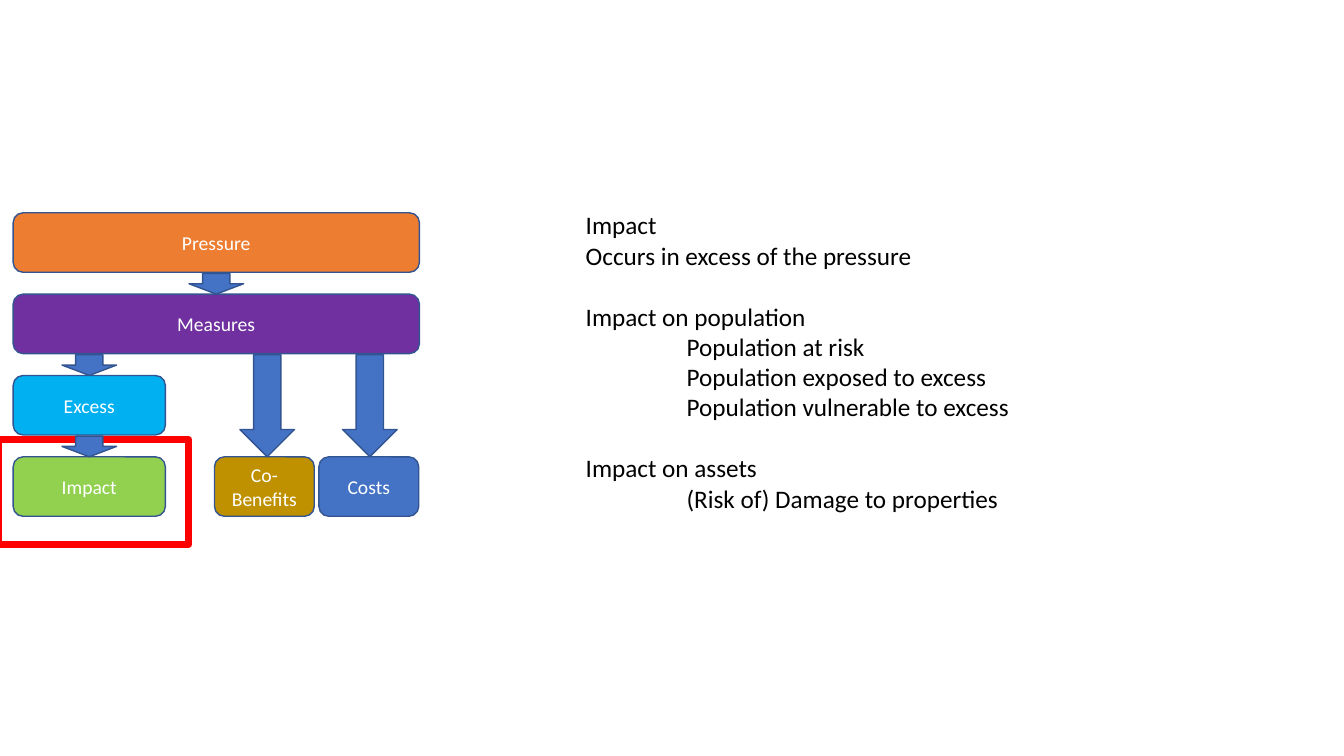
"""Build a slide showing how pressure, measures and excess lead to impact."""
from pptx import Presentation
from pptx.dml.color import RGBColor
from pptx.enum.shapes import MSO_SHAPE
from pptx.enum.text import MSO_ANCHOR, PP_ALIGN
from pptx.util import Pt

RECTANGLE = MSO_SHAPE.RECTANGLE
ROUNDED = MSO_SHAPE.ROUNDED_RECTANGLE
DOWN_ARROW = MSO_SHAPE.DOWN_ARROW
MIDDLE = MSO_ANCHOR.MIDDLE
LEFT, CENTER = PP_ALIGN.LEFT, PP_ALIGN.CENTER

BLACK = RGBColor(0x00, 0x00, 0x00)
WHITE = RGBColor(0xFF, 0xFF, 0xFF)
RED = RGBColor(0xFF, 0x00, 0x00)
ORANGE = RGBColor(0xED, 0x7D, 0x31)
PURPLE = RGBColor(0x70, 0x30, 0xA0)
SKY = RGBColor(0x00, 0xB0, 0xF0)
GREEN = RGBColor(0x92, 0xD0, 0x50)
GOLD = RGBColor(0xBF, 0x90, 0x00)
BLUE = RGBColor(0x44, 0x72, 0xC4)
OUTLINE = RGBColor(0x32, 0x54, 0x91)

FONT = "Calibri"
ROW_TOP, ROW_PITCH, BOX_HEIGHT = 152, 58.1, 42.5
ARROW_WIDTH, ARROW_GAP = 39, 0.8
LINE_HEIGHT, INDENT = 22, 72


def write(para, text, size=14, color=WHITE, align=CENTER, before=0, indent=0):
    para.alignment = align
    para.space_before = Pt(before)
    properties = para._p.get_or_add_pPr()
    properties.set("marL", str(Pt(indent)))
    properties.set("indent", "0")
    span = para.add_run()
    span.text = text
    span.font.name = FONT
    span.font.size = Pt(size)
    span.font.color.rgb = color


def add_box(kind, left, top, width, height, fill=None, line=OUTLINE, weight=1):
    box = page.shapes.add_shape(kind, Pt(left), Pt(top), Pt(width), Pt(height))
    box.shadow.inherit = False
    if fill is None:
        box.fill.background()
    else:
        box.fill.solid()
        box.fill.fore_color.rgb = fill
    box.line.color.rgb = line
    box.line.width = Pt(weight)
    return box


deck = Presentation()
deck.slide_width, deck.slide_height = Pt(960), Pt(540)
page = deck.slides.add_slide(deck.slide_layouts[6])

notes = [
    ("Impact", 0, 0),
    ("Occurs in excess of the pressure", 0, 0),
    ("Impact on population", LINE_HEIGHT, 0),
    ("Population at risk", 0, INDENT),
    ("Population exposed to excess", 0, INDENT),
    ("Population vulnerable to excess", 0, INDENT),
    ("Impact on assets", LINE_HEIGHT, 0),
    ("(Risk of) Damage to properties", 0, INDENT),
]
explanation = page.shapes.add_textbox(Pt(411.3), Pt(146.3), Pt(536.4), Pt(225.4))
frame = explanation.text_frame
frame.word_wrap = True
for index, (text, before, indent) in enumerate(notes):
    para = frame.add_paragraph() if index else frame.paragraphs[0]
    write(para, text, size=18, color=BLACK, align=LEFT, before=before, indent=indent)

add_box(RECTANGLE, -1.4, 314, 136.1, 74.9, line=RED, weight=5)

stages = [
    ("Pressure", 0, 9.4, 290.2, ORANGE),
    ("Measures", 1, 9.4, 290.2, PURPLE),
    ("Excess", 2, 9.4, 108.7, SKY),
    ("Impact", 3, 9.4, 108.7, GREEN),
    ("Co-Benefits", 3, 153.2, 71.3, GOLD),
    ("Costs", 3, 227.8, 71.3, BLUE),
]
for text, row, left, width, fill in stages:
    box = add_box(ROUNDED, left, ROW_TOP + row * ROW_PITCH, width, BOX_HEIGHT, fill)
    box.text_frame.word_wrap = True
    box.text_frame.vertical_anchor = MIDDLE
    write(box.text_frame.paragraphs[0], text)

arrows = [(0, 1, 154.5), (1, 2, 63.8), (2, 3, 63.8), (1, 3, 190.9), (1, 3, 264.2)]
for start, end, center in arrows:
    top = ROW_TOP + start * ROW_PITCH + BOX_HEIGHT + ARROW_GAP
    height = ROW_TOP + end * ROW_PITCH - top
    add_box(DOWN_ARROW, center - ARROW_WIDTH / 2, top, ARROW_WIDTH, height, BLUE)

deck.save("out.pptx")
